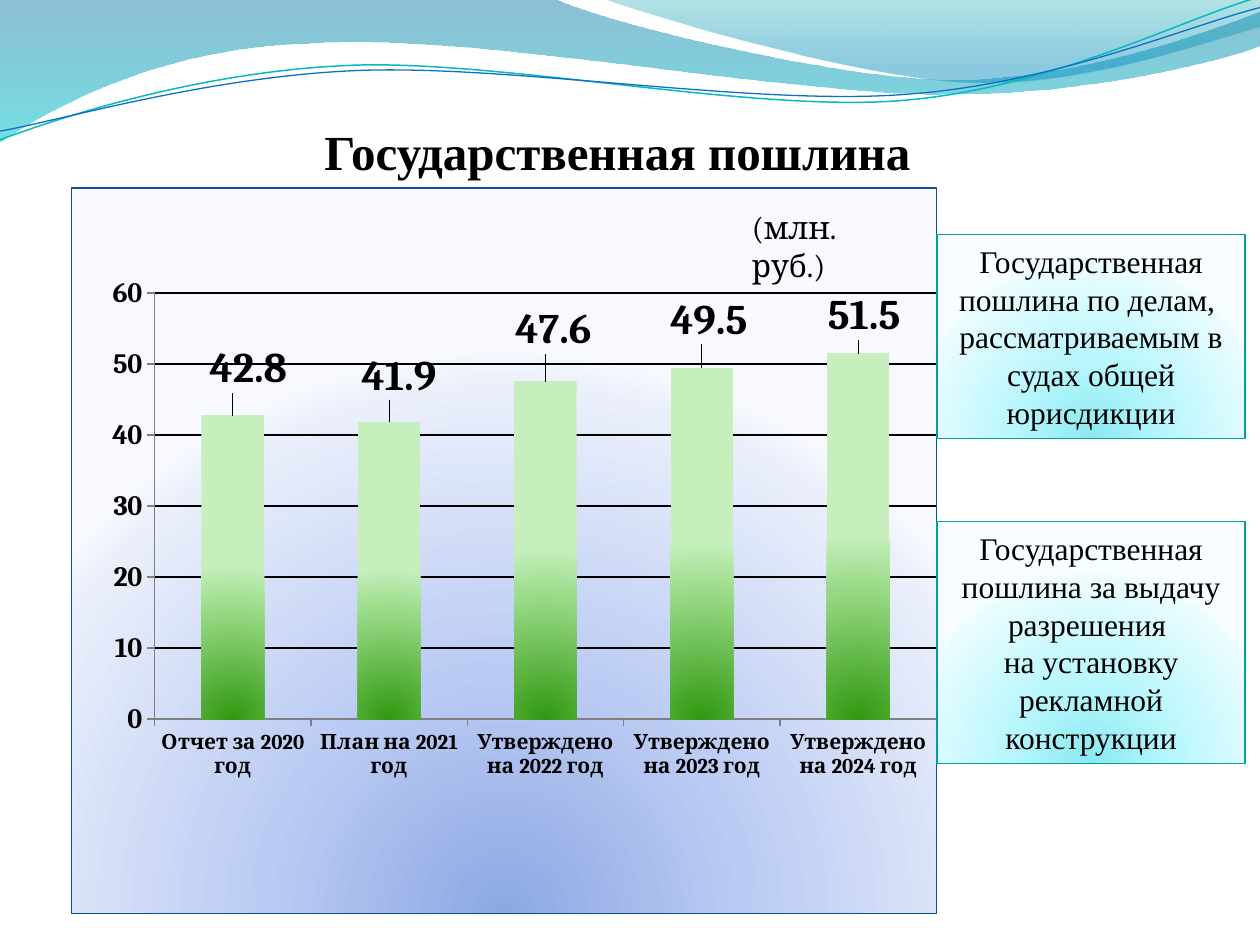
from pptx import Presentation
from pptx.chart.data import CategoryChartData
from pptx.dml.color import RGBColor
from pptx.enum.chart import XL_CHART_TYPE, XL_LABEL_POSITION, XL_TICK_MARK
from pptx.enum.shapes import MSO_SHAPE
from pptx.enum.text import MSO_ANCHOR, PP_ALIGN
from pptx.oxml import parse_xml
from pptx.oxml.ns import nsdecls, qn
from pptx.util import Pt

SERIF, CHART_FONT = "Times New Roman", "Cambria"
TITLE = "Государственная пошлина"
UNIT = "(млн. руб.)"
CATEGORIES = ["Отчет за 2020 год", "План на 2021 год", "Утверждено на 2022 год",
              "Утверждено на 2023 год", "Утверждено на 2024 год"]
VALUES = [42.8, 41.9, 47.6, 49.5, 51.5]
LABEL_SHIFTS = [(9, -9.7), (5.7, -9.1), (4.6, -12.6), (4, -10.3), (3.4, -4.6)]
CHART_BOX = (40.5, 107, 495, 415.5)
PLOT_BOX = (47.5, 60.2, 447.5, 243.9)
NOTES = [
    (134, 116.5, ["Государственная пошлина по делам, ",
                  "рассматриваемым в судах общей юрисдикции"]),
    (298, 138.2, ["Государственная пошлина за выдачу разрешения ",
                  "на установку рекламной конструкции"]),
]

CIRCLE = ('<a:path path="circle"><a:fillToRect l="50000" t="130000" '
          'r="50000" b="-30000"/></a:path>')
DOWN = '<a:lin ang="5400000" scaled="1"/>'
BAR_STOPS = [(0, "319811", 100), (68, "95D882", 100), (100, "C6EFBD", 100)]
CHART_STOPS = [(0, "8DA8E3", 100), (43, "BBCBF3", 100), (93, "EAEFFB", 100), (100, "F7F9FF", 100)]
NOTE_STOPS = [(0, "8BE9F1", 100), (43, "B9F7FD", 100), (93, "EAFCFE", 100), (100, "F8FEFF", 100)]

WAVES = [
    ([(0, 0), (316.8, -0.7), (342.7, 12.2, 478.1, 45.4, 545.8, 45.4),
      (614.2, 45.4, 689.8, 18.7, 720, 6.5), (720.7, 25.9),
      (707.8, 31.7, 626.4, 54.7, 537.1, 54), (447.8, 54, 275, 20.2, 185, 24.5),
      (92.9, 25.9, 33.1, 59.8, -0.7, 81.4)],
     [(0, "0074A1", 45), (100, "00C6CF", 55)]),
    ([(344.9, -0.7), (366.5, 7.9, 491, 44.6, 553.7, 46.8),
      (616.3, 49.7, 691.9, 23, 720, 15.1), (720, 0)],
     [(0, "00A1A9", 30), (80, "008BBF", 45)]),
]
STRANDS = [
    ([(0, 79.9), (34.6, 67, 113.8, 41, 199.4, 37.4), (284.4, 33.8, 427, 64.1, 513.4, 57.6),
      (599.8, 51.1, 675.4, 10.8, 718.6, -1.4)], "0AB8BF", 0.85),
    ([(0, 74.9), (33.8, 69.1, 118.1, 43.9, 203.8, 40.3), (290.2, 36.7, 429.8, 60.5, 516.2, 54),
      (601.9, 48.2, 677.5, 15.1, 720, 4.3)], "0F6FC6", 0.75),
]


def color(value):
    return RGBColor.from_string(value)


def set_gradient(properties, stops, direction):
    stop_xml = "".join(
        f'<a:gs pos="{position * 1000}"><a:srgbClr val="{value}">'
        + (f'<a:alpha val="{opacity * 1000}"/>' if opacity < 100 else "")
        + '</a:srgbClr></a:gs>'
        for position, value, opacity in stops)
    gradient = parse_xml(f'<a:gradFill {nsdecls("a")} rotWithShape="1">'
                         f'<a:gsLst>{stop_xml}</a:gsLst>{direction}</a:gradFill>')
    properties.replace(properties.find(qn("a:solidFill")), gradient)


def set_font(font, size, name=CHART_FONT, bold=False):
    font.size, font.name, font.bold = Pt(size), name, bold
    font.color.rgb = color("000000")


def write_text(shape, paragraphs, size=18, name=SERIF, bold=False,
               align=PP_ALIGN.LEFT, anchor=MSO_ANCHOR.TOP):
    frame = shape.text_frame
    frame.word_wrap = True
    frame.vertical_anchor = anchor
    for index, text in enumerate(paragraphs):
        paragraph = frame.paragraphs[0] if index == 0 else frame.add_paragraph()
        paragraph.alignment = align
        run = paragraph.add_run()
        run.text = text
        set_font(run.font, size, name, bold)


def add_outline(slide, segments, close):
    anchors = [(Pt(segment[-2]), Pt(segment[-1])) for segment in segments]
    builder = slide.shapes.build_freeform(*anchors[0])
    builder.add_line_segments(anchors[1:], close=close)
    shape = builder.convert_to_shape()
    shape.shadow.inherit = False
    straight_lines = list(shape._element.iter(qn("a:lnTo")))
    for line, segment in zip(straight_lines, segments[1:]):
        if len(segment) == 6:
            points = "".join(f'<a:pt x="{Pt(x) - shape.left}" y="{Pt(y) - shape.top}"/>'
                             for x, y in zip(segment[::2], segment[1::2]))
            curve = parse_xml(f'<a:cubicBezTo {nsdecls("a")}>{points}</a:cubicBezTo>')
            line.getparent().replace(line, curve)
    return shape


def manual_layout(lengths, inner=False):
    target = '<c:layoutTarget val="inner"/>' if inner else ""
    modes = '<c:xMode val="edge"/><c:yMode val="edge"/>' if inner else ""
    width, height = CHART_BOX[2:]
    sizes = "".join(f'<c:{tag} val="{length / whole:.4f}"/>' for tag, length, whole
                    in zip("xywh", lengths, (width, height, width, height)))
    return parse_xml(f'<c:layout {nsdecls("c")}><c:manualLayout>{target}{modes}{sizes}'
                     '</c:manualLayout></c:layout>')


def hide_leader_lines(labels_element):
    for element in labels_element.findall(qn("c:showLeaderLines")):
        labels_element.remove(element)
    labels_element.append(parse_xml(
        f'<c:extLst {nsdecls("c")}><c:ext uri="{{CE6537A1-D6FC-4f65-9D91-7224C49458BB}}" '
        'xmlns:c15="http://schemas.microsoft.com/office/drawing/2012/chart">'
        '<c15:showLeaderLines val="0"/></c:ext></c:extLst>'))


def add_duty_chart(slide):
    data = CategoryChartData(number_format="0.0")
    data.categories = CATEGORIES
    data.add_series("Series 1", VALUES)
    box = [Pt(length) for length in CHART_BOX]
    chart = slide.shapes.add_chart(XL_CHART_TYPE.COLUMN_CLUSTERED, *box, data).chart
    chart.has_legend = False
    chart.has_title = False
    set_font(chart.font, 10)

    chart_space = chart.element
    background = parse_xml(
        f'<c:spPr {nsdecls("c", "a")}><a:solidFill/><a:ln w="{Pt(0.75)}"><a:solidFill>'
        '<a:srgbClr val="095295"/></a:solidFill></a:ln></c:spPr>')
    chart_space.find(qn("c:txPr")).addprevious(background)
    set_gradient(background, CHART_STOPS, CIRCLE)

    plot_area = chart_space.find(qn("c:chart")).find(qn("c:plotArea"))
    for layout in plot_area.findall(qn("c:layout")):
        plot_area.remove(layout)
    plot_area.insert(0, manual_layout(PLOT_BOX, inner=True))

    for axis, size in ((chart.category_axis, 12), (chart.value_axis, 16)):
        set_font(axis.tick_labels.font, size, bold=True)
        axis.major_tick_mark = XL_TICK_MARK.OUTSIDE
        axis.format.line.color.rgb = color("808080")
    value_axis = chart.value_axis
    value_axis.minimum_scale, value_axis.maximum_scale, value_axis.major_unit = 0, 60, 10
    value_axis.tick_labels.number_format = "0"
    value_axis.tick_labels.number_format_is_linked = False
    value_axis.major_gridlines.format.line.color.rgb = color("000000")
    value_axis.major_gridlines.format.line.width = Pt(0.75)

    plot = chart.plots[0]
    plot.gap_width = 150
    plot.vary_by_categories = False
    series = plot.series[0]
    series.format.fill.solid()
    set_gradient(series._element.spPr, BAR_STOPS, CIRCLE)
    labels = series.data_labels
    labels.show_value = True
    labels.number_format = "0.0"
    labels.number_format_is_linked = False
    set_font(labels.font, 24, bold=True)
    for index in range(len(VALUES)):
        label = series.points[index].data_label
        set_font(label.font, 24, bold=True)
        label.position = XL_LABEL_POSITION.OUTSIDE_END
    for element, shift in zip(series._element.iter(qn("c:dLbl")), LABEL_SHIFTS):
        element.find(qn("c:idx")).addnext(manual_layout(shift))
    hide_leader_lines(series._element.find(qn("c:dLbls")))


def add_note(slide, top, height, paragraphs):
    shape = slide.shapes.add_shape(MSO_SHAPE.RECTANGLE, Pt(535.5), Pt(top), Pt(176), Pt(height))
    shape.fill.solid()
    set_gradient(shape._element.spPr, NOTE_STOPS, CIRCLE)
    shape.line.color.rgb = color("069CA3")
    shape.line.width = Pt(0.75)
    shape.shadow.inherit = False
    write_text(shape, paragraphs, align=PP_ALIGN.CENTER, anchor=MSO_ANCHOR.MIDDLE)


def main():
    presentation = Presentation()
    presentation.slide_width, presentation.slide_height = Pt(720), Pt(540)
    slide = presentation.slides.add_slide(presentation.slide_layouts[6])
    for segments, stops in WAVES:
        wave = add_outline(slide, segments, close=True)
        wave.fill.solid()
        set_gradient(wave._element.spPr, stops, DOWN)
        wave.line.fill.background()
    for segments, line_color, width in STRANDS:
        strand = add_outline(slide, segments, close=False)
        strand.fill.background()
        strand.line.color.rgb = color(line_color)
        strand.line.width = Pt(width)
    title = slide.shapes.add_textbox(Pt(178.3), Pt(66), Pt(427.5), Pt(41))
    write_text(title, [TITLE], size=28, bold=True)
    add_duty_chart(slide)
    for top, height, paragraphs in NOTES:
        add_note(slide, top, height, paragraphs)
    unit = slide.shapes.add_textbox(Pt(422.5), Pt(115.6), Pt(104.5), Pt(29))
    write_text(unit, [UNIT], name=CHART_FONT)
    presentation.save("out.pptx")


if __name__ == "__main__":
    main()
